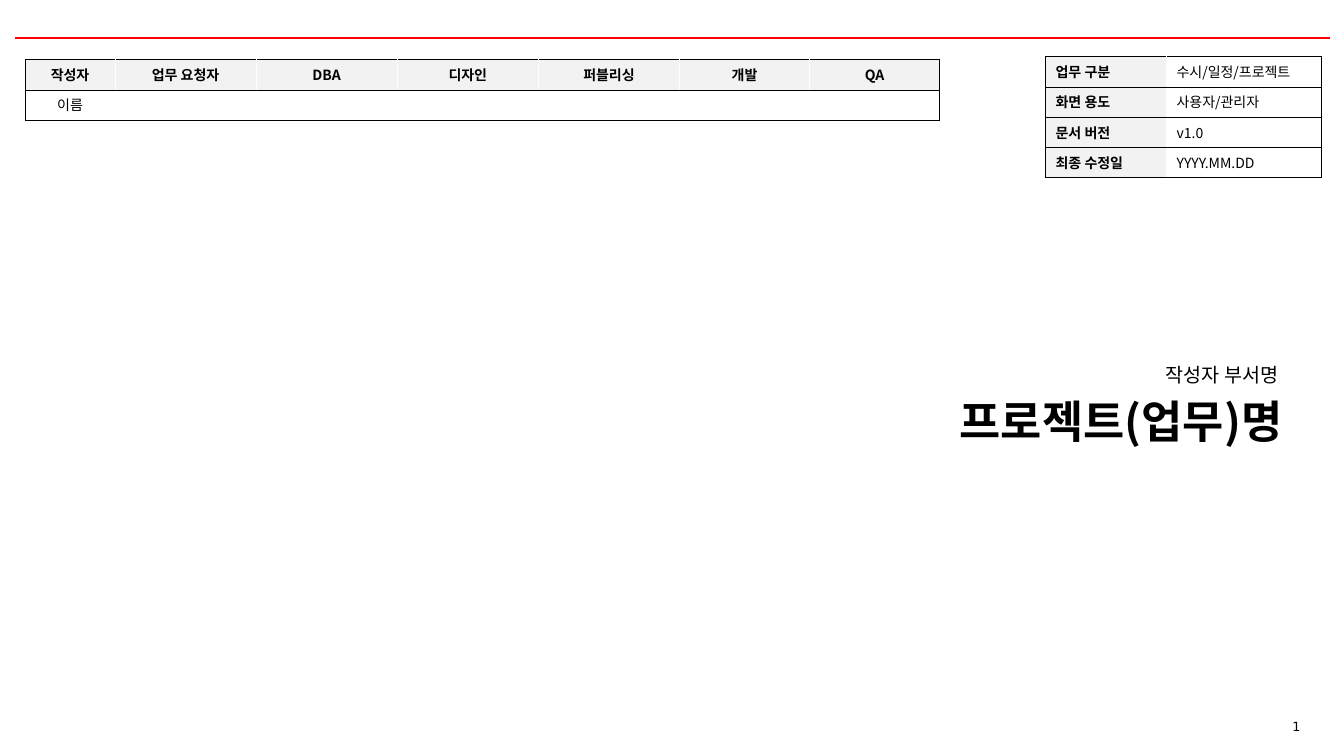
import pptx
import pptx.dml.color
import pptx.enum.shapes
import pptx.enum.text
import pptx.oxml
import pptx.oxml.ns
import pptx.util
from pptx.util import Inches

COLORS = {"text": "000000", "rule": "FF0000", "label": "F2F2F2", "plain": "FFFFFF",
          "border": "000000", "divider": "FFFFFF"}
FONT = "Noto Sans CJK KR"
TABLE_SIZE = 10
ROW_HEIGHT = 0.3
ROLES = ["작성자", "업무 요청자", "DBA", "디자인", "퍼블리싱", "개발", "QA"]
DOCUMENT_INFO = [
    ["업무 구분", "수시/일정/프로젝트"],
    ["화면 용도", "사용자/관리자"],
    ["문서 버전", "v1.0"],
    ["최종 수정일", "YYYY.MM.DD"],
]
ALIGN = pptx.enum.text.PP_ALIGN
ANCHOR = pptx.enum.text.MSO_ANCHOR


def rgb(name):
    return pptx.dml.color.RGBColor.from_string(COLORS[name])


def add_run(paragraph, text, size, bold=False):
    run = paragraph.add_run()
    run.text = text
    run.font.size = pptx.util.Pt(size)
    run.font.bold = bold
    run.font.name = FONT
    run.font.color.rgb = rgb("text")
    east_asian = pptx.oxml.parse_xml(
        f'<a:ea {pptx.oxml.ns.nsdecls("a")} typeface="{FONT}"/>')
    run.font._element.find(pptx.oxml.ns.qn("a:latin")).addnext(east_asian)


def place(shape, left, top, width, height):
    shape.left, shape.top = Inches(left), Inches(top)
    shape.width, shape.height = Inches(width), Inches(height)


def write_heading(shape, text, size, bold=False, wrap=False):
    frame = shape.text_frame
    frame.word_wrap = wrap
    frame.auto_size = pptx.enum.text.MSO_AUTO_SIZE.SHAPE_TO_FIT_TEXT
    frame.vertical_anchor = ANCHOR.TOP
    paragraph = frame.paragraphs[0]
    paragraph.alignment = ALIGN.RIGHT
    paragraph.line_spacing = 1.0
    paragraph.space_before = pptx.util.Pt(0)
    add_run(paragraph, text, size, bold)


def add_rule(slide):
    rule = slide.shapes.add_connector(
        pptx.enum.shapes.MSO_CONNECTOR.STRAIGHT,
        Inches(0.15), Inches(0.38), Inches(13.19), Inches(0.38))
    rule.line.color.rgb = rgb("rule")
    rule.line.width = pptx.util.Pt(1.5)
    rule._element.spPr.append(pptx.oxml.parse_xml(
        f'<a:effectLst {pptx.oxml.ns.nsdecls("a")}/>'))


def add_slide_number(slide):
    box = slide.shapes.add_textbox(Inches(12.72), Inches(7.08), Inches(0.4), Inches(0.24))
    box.text_frame.word_wrap = False
    box.text_frame.paragraphs[0]._p.append(pptx.oxml.parse_xml(
        f'<a:fld {pptx.oxml.ns.nsdecls("a")} type="slidenum"'
        ' id="{B6F15528-21DE-4FAA-801E-634DDDAF4B2B}">'
        f'<a:rPr sz="900"><a:solidFill><a:srgbClr val="{COLORS["text"]}"/></a:solidFill>'
        '<a:latin typeface="DejaVu Sans"/></a:rPr><a:t>1</a:t></a:fld>'))


def set_borders(cell, first, last):
    """Black outline and row lines, with white dividers between columns."""
    sides = {"L": "border" if first else "divider",
             "R": "border" if last else "divider",
             "T": "border", "B": "border"}
    properties = cell._tc.get_or_add_tcPr()
    for side, color in sides.items():
        properties.append(pptx.oxml.parse_xml(
            f'<a:ln{side} {pptx.oxml.ns.nsdecls("a")} w="3175"><a:solidFill>'
            f'<a:srgbClr val="{COLORS[color]}"/></a:solidFill></a:ln{side}>'))


def add_grid(slide, left, top, widths, rows, is_label, alignment):
    """Add a table; is_label(row, column) tells which cells are bold and grey."""
    table = slide.shapes.add_table(
        len(rows), len(widths), Inches(left), Inches(top),
        Inches(sum(widths)), Inches(ROW_HEIGHT * len(rows))).table
    table.first_row = table.horz_banding = False
    for column, width in zip(table.columns, widths):
        column.width = Inches(width)
    for r, texts in enumerate(rows):
        table.rows[r].height = Inches(ROW_HEIGHT)
        for c, text in enumerate(texts):
            cell = table.cell(r, c)
            label = is_label(r, c)
            set_borders(cell, c == 0, c == len(widths) - 1)
            cell.fill.solid()
            cell.fill.fore_color.rgb = rgb("label" if label else "plain")
            cell.vertical_anchor = ANCHOR.MIDDLE
            paragraph = cell.text_frame.paragraphs[0]
            paragraph.alignment = alignment
            if text:
                add_run(paragraph, text, TABLE_SIZE, label)
            else:
                paragraph._p.get_or_add_endParaRPr().set("sz", str(TABLE_SIZE * 100))


def main():
    deck = pptx.Presentation()
    deck.slide_width, deck.slide_height = Inches(13.33), Inches(7.5)
    slide = deck.slides.add_slide(deck.slide_layouts[5])

    project_name = slide.shapes.title
    place(project_name, 9.33, 3.86, 3.49, 0.64)
    write_heading(project_name, "프로젝트(업무)명", 32, bold=True, wrap=True)
    department = slide.shapes.add_textbox(
        Inches(11.42), Inches(3.55), Inches(1.36), Inches(0.34))
    write_heading(department, "작성자 부서명", 14)

    add_rule(slide)
    names = ["이름"] + [""] * (len(ROLES) - 1)
    add_grid(slide, 0.25, 0.59, [0.89] + [1.4] * 4 + [1.29] * 2, [ROLES, names],
             lambda row, column: row == 0, ALIGN.CENTER)
    add_grid(slide, 10.37, 0.56, [1.2, 1.53], DOCUMENT_INFO,
             lambda row, column: column == 0, ALIGN.LEFT)
    add_slide_number(slide)
    deck.save("out.pptx")


if __name__ == "__main__":
    main()
